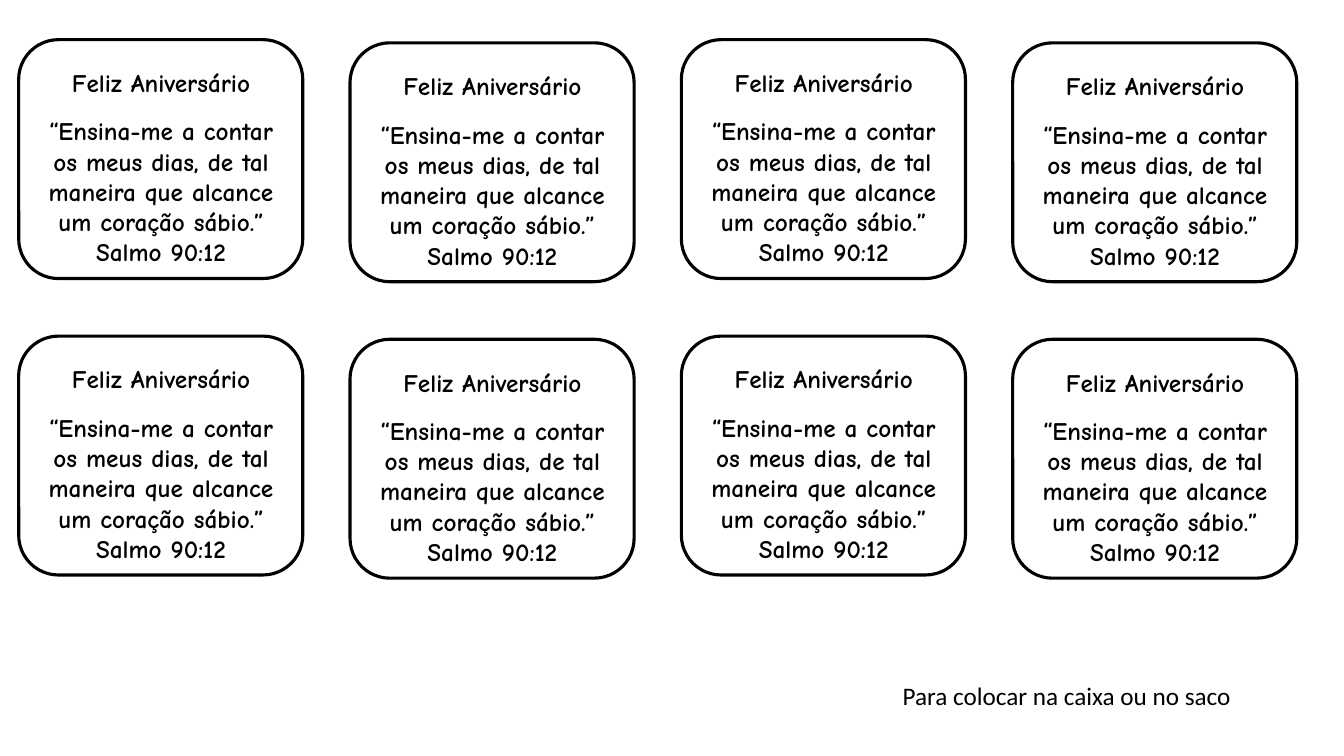
from itertools import product

from pptx import Presentation
from pptx.dml.color import RGBColor
from pptx.enum.shapes import MSO_SHAPE
from pptx.enum.text import MSO_AUTO_SIZE, PP_ALIGN
from pptx.util import Cm, Pt

BLACK = RGBColor(0x00, 0x00, 0x00)
ROUND = MSO_SHAPE.ROUNDED_RECTANGLE
GROW = MSO_AUTO_SIZE.SHAPE_TO_FIT_TEXT
LEFT, CENTER = PP_ALIGN.LEFT, PP_ALIGN.CENTER

COLS, ROWS = 4, 2
STEP_X, STEP_Y = 8.35, 7.47
DROP = 0.08  # every second column sits slightly lower

# Each line of a card with the space before it in points
VERSE = [
    ("Feliz Aniversário", 0),
    ("“Ensina-me a contar os meus dias, de tal maneira que alcance um coração sábio.”", 13),
    ("Salmo 90:12", 0),
]
NOTE = [("Para colocar na caixa ou no saco", 0)]


def add_frame(slide, x, y):
    frame = slide.shapes.add_shape(ROUND, Cm(x), Cm(y), Cm(6.02), Cm(7.16))
    frame.rotation = 90
    frame.shadow.inherit = False
    frame.fill.background()
    frame.line.color.rgb = BLACK
    frame.line.width = Pt(2.25)


def add_text(slide, x, y, w, h, lines, face, bold, align):
    box = slide.shapes.add_textbox(Cm(x), Cm(y), Cm(w), Cm(h))
    text = box.text_frame
    text.word_wrap = True
    text.auto_size = GROW
    for i, (words, gap) in enumerate(lines):
        para = text.add_paragraph() if i else text.paragraphs[0]
        para.alignment = align
        para.space_before = Pt(gap)
        run = para.add_run()
        run.text = words
        run.font.name = face
        run.font.size = Pt(18)
        run.font.bold = bold
        run.font.color.rgb = BLACK


def add_card(slide, col, row):
    x = col * STEP_X
    y = row * STEP_Y + col % 2 * DROP
    add_frame(slide, x + 1.04, y + 0.43)
    add_text(slide, x + 0.63, y + 1.57, 6.86, 5.38, VERSE, "Comic Neue", True, CENTER)


def main():
    deck = Presentation()
    deck.slide_width, deck.slide_height = Cm(33.87), Cm(19.05)
    slide = deck.slides.add_slide(deck.slide_layouts.get_by_name("Blank"))
    for col, row in product(range(COLS), range(ROWS)):
        add_card(slide, col, row)
    add_text(slide, 22.5, 17.02, 10.03, 1.02, NOTE, "Calibri", False, LEFT)
    deck.save("out.pptx")


if __name__ == "__main__":
    main()
